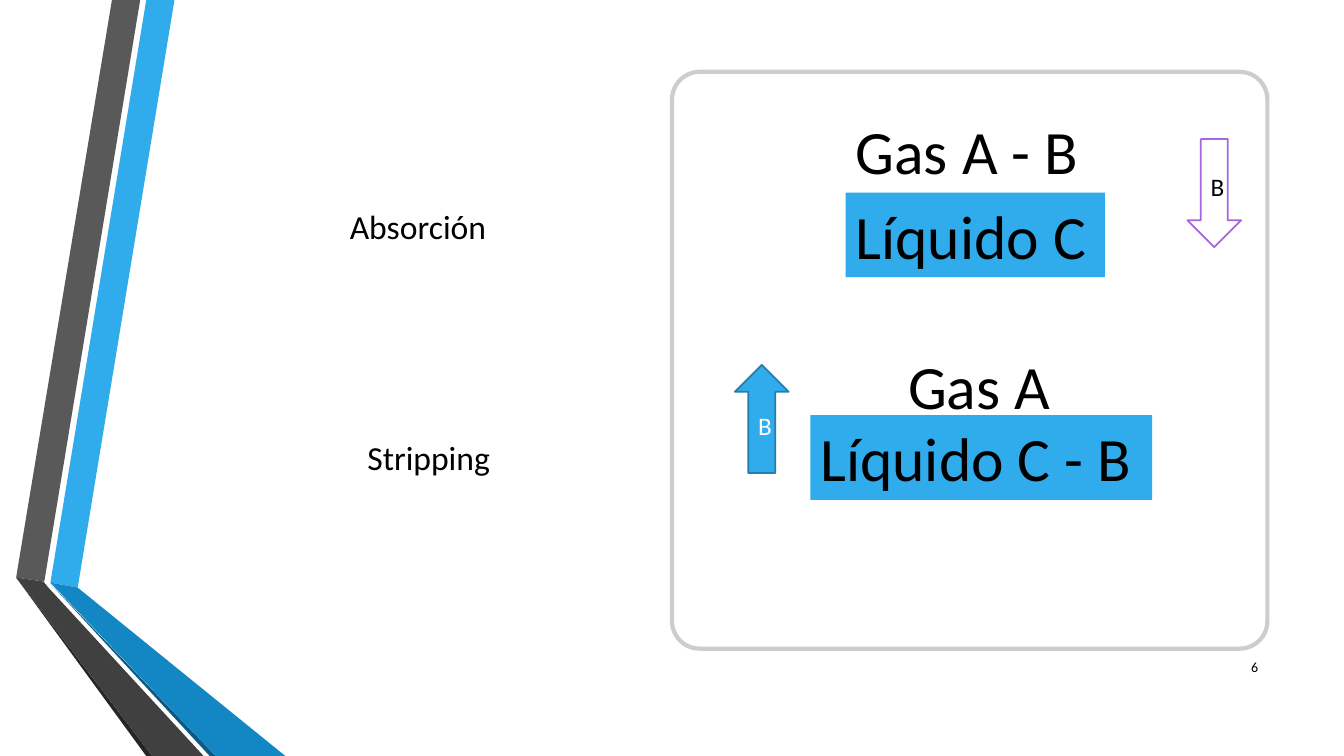
from dataclasses import dataclass

from pptx import Presentation
from pptx.dml.color import RGBColor
from pptx.enum.shapes import MSO_SHAPE as Shape
from pptx.enum.text import MSO_ANCHOR as Anchor, MSO_AUTO_SIZE as AutoSize, PP_ALIGN as Align
from pptx.util import Inches, Pt


@dataclass(frozen=True)
class Theme:
    font: str = "Calibri"
    ink: str = "000000"
    paper: str = "FFFFFF"
    blue: str = "30ACEC"
    blue_edge: str = "247FAF"
    blue_fold: str = "1287C3"
    blue_shade: str = "0C5A82"
    gray: str = "595959"
    gray_fold: str = "404040"
    gray_shade: str = "262626"
    panel_edge: str = "CBCECF"
    violet: str = "A666E1"
    phase_size: int = 44
    label_size: int = 24
    arrow_size: int = 18
    number_size: int = 10


THEME = Theme()

# All lengths are columns and rows of a grid of 100 by 100 over the slide.
GRID = 100
RIBBONS = [
    (THEME.blue, [(3.75, 77.07), (5.78, 77.73), (12.98, 0), (10.88, 0)]),
    (THEME.gray, [(10.43, 0), (8.33, 0), (1.2, 76.4), (3.3, 76.93)]),
    (THEME.gray_shade, [(1.2, 76.4), (10.88, 100), (11.33, 100)]),
    (THEME.blue_shade, [(3.75, 77.2), (15.6, 100), (16.05, 100)]),
    (THEME.blue_fold, [(3.75, 77.07), (16.05, 100), (21.23, 100), (5.78, 77.73)]),
    (THEME.gray_fold, [(1.2, 76.4), (11.33, 100), (15.15, 100), (3.6, 77.73), (3.23, 76.93)]),
]
PANEL = (50, 9.5, 44.3, 76.3)
PANEL_CORNER = 0.048
LABEL_SIZE = (20, 10.5)
LABELS = [("Absorción", 21.1, 24.7), ("Stripping", 21.9, 55.2)]
PHASE_HEIGHT = 11.2
PHASES = [  # text, left, top, width, fill
    ("Gas A - B", 62.93, 14.27, 18.5, None),
    ("Líquido C", 62.93, 25.47, 19.28, THEME.blue),
    ("Gas A", 66.83, 45.33, 12.38, None),
    ("Líquido C - B", 60.3, 54.93, 25.43, THEME.blue),
]
ARROW_SIZE = (4, 14.3)
ARROWS = [  # shape, left, top, fill, edge, ink
    (Shape.DOWN_ARROW, 88.35, 18.4, THEME.paper, THEME.violet, THEME.ink),
    (Shape.UP_ARROW, 54.68, 48.27, THEME.blue, THEME.blue_edge, THEME.paper),
]
TRANSFERRED = "B"
PAGE_NUMBER = ("6", (89.85, 85.6, 4.5, 5.3))

deck = Presentation()
deck.slide_width, deck.slide_height = Inches(13.33), Inches(7.5)
page = deck.slides.add_slide(deck.slide_layouts[0])


def to_slide(column, row):
    return round(column * deck.slide_width / GRID), round(row * deck.slide_height / GRID)


def place(left, top, width, height):
    return (*to_slide(left, top), *to_slide(width, height))


def paint(shape, fill, edge=None, weight=1.25):
    shape.shadow.inherit = False
    shape.fill.solid()
    shape.fill.fore_color.rgb = RGBColor.from_string(fill)
    if edge:
        shape.line.color.rgb = RGBColor.from_string(edge)
        shape.line.width = Pt(weight)
    else:
        shape.line.fill.background()
    return shape


def write(box, text, size, color=THEME.ink, align=Align.CENTER, anchor=Anchor.MIDDLE,
          wrap=True, fit=AutoSize.NONE):
    frame = box.text_frame
    frame.word_wrap, frame.auto_size, frame.vertical_anchor = wrap, fit, anchor
    para = frame.paragraphs[0]
    para.alignment, para.space_before = align, Pt(0)
    span = para.add_run()
    span.text = text
    span.font.name, span.font.size = THEME.font, Pt(size)
    span.font.color.rgb = RGBColor.from_string(color)


def add_ribbon(color, corners):
    points = [to_slide(*corner) for corner in corners]
    outline = page.shapes.build_freeform(*points[0])
    outline.add_line_segments(points[1:], close=True)
    paint(outline.convert_to_shape(), color)


for color, corners in RIBBONS:
    add_ribbon(color, corners)

panel = page.shapes.add_shape(Shape.ROUNDED_RECTANGLE, *place(*PANEL))
panel.adjustments[0] = PANEL_CORNER
paint(panel, THEME.paper, THEME.panel_edge, weight=3)

for box, (text, left, top) in zip(page.placeholders, LABELS):
    box.left, box.top, box.width, box.height = place(left, top, *LABEL_SIZE)
    write(box, text, THEME.label_size)

number, number_area = PAGE_NUMBER
write(page.shapes.add_textbox(*place(*number_area)), number, THEME.number_size, align=Align.RIGHT)

for text, left, top, width, fill in PHASES:
    area = place(left, top, width, PHASE_HEIGHT)
    if fill:
        box = paint(page.shapes.add_shape(Shape.RECTANGLE, *area), fill)
    else:
        box = page.shapes.add_textbox(*area)
    write(box, text, THEME.phase_size, align=Align.LEFT, anchor=Anchor.TOP,
          wrap=False, fit=AutoSize.SHAPE_TO_FIT_TEXT)

for kind, left, top, fill, edge, ink in ARROWS:
    arrow = paint(page.shapes.add_shape(kind, *place(left, top, *ARROW_SIZE)), fill, edge)
    write(arrow, TRANSFERRED, THEME.arrow_size, color=ink)

deck.save("out.pptx")
